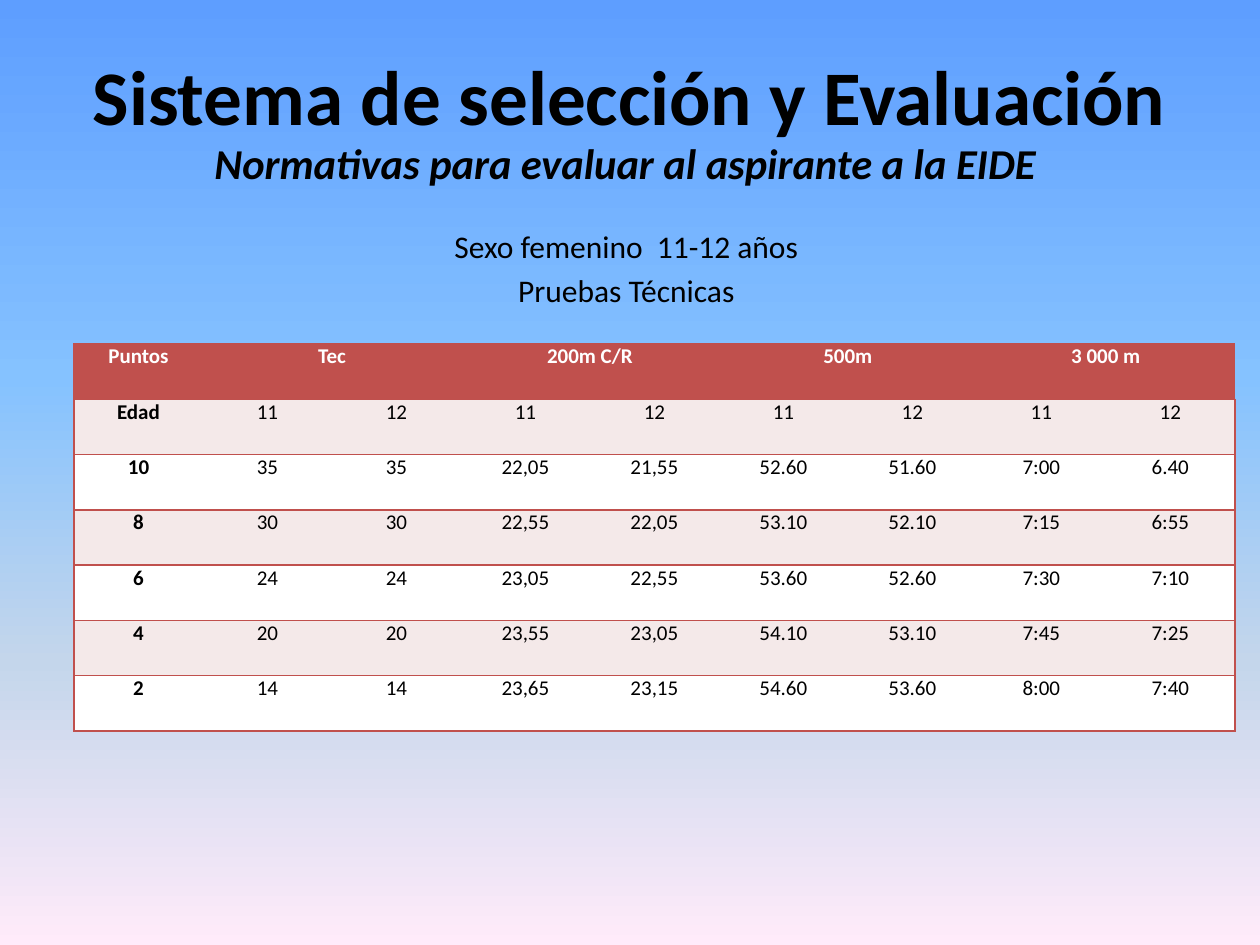
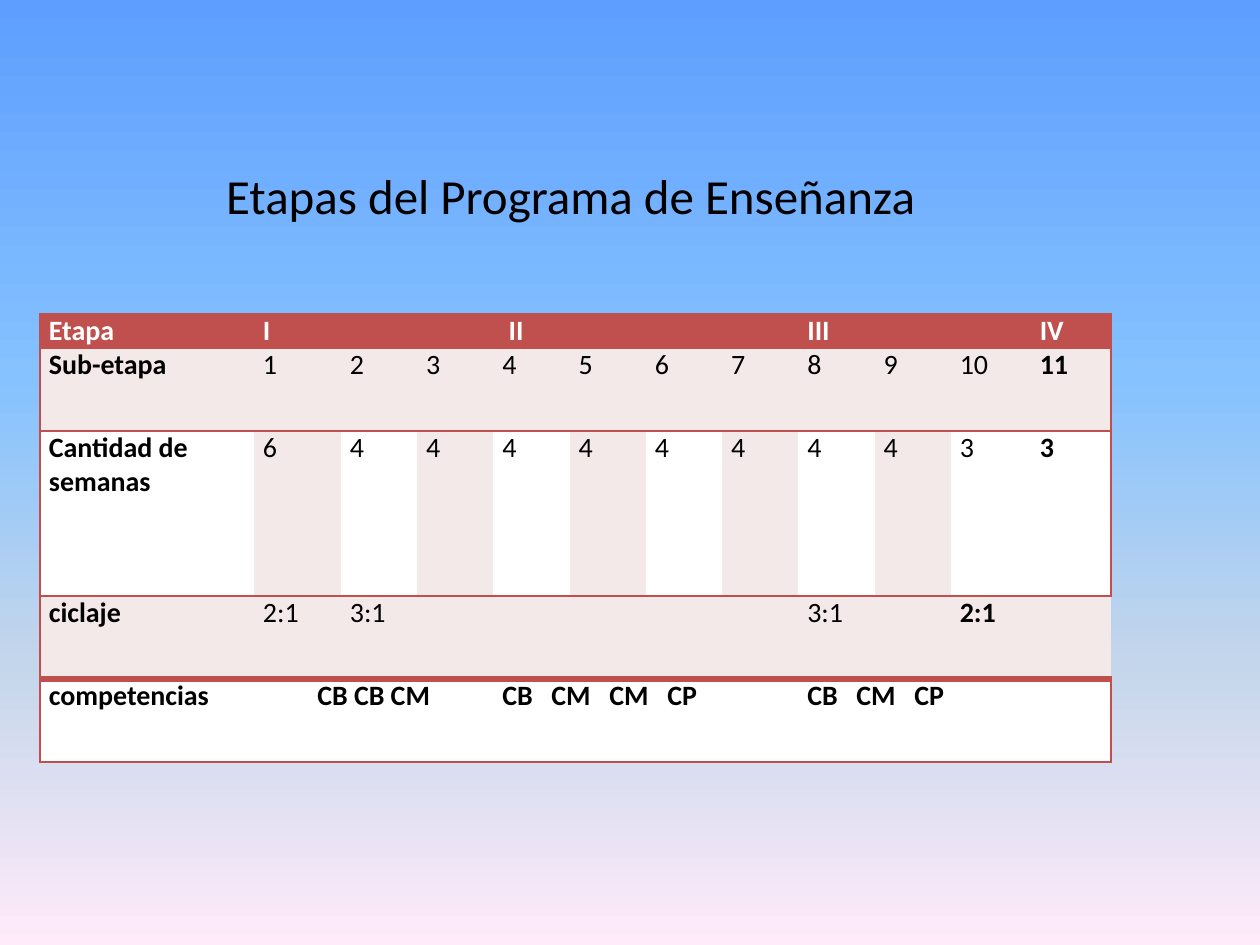
import lxml.etree
import pptx
import pptx.dml.color
import pptx.enum.text
import pptx.oxml.ns
import pptx.util

RGBColor = pptx.dml.color.RGBColor
Align = pptx.enum.text.PP_ALIGN
qn = pptx.oxml.ns.qn

BLACK = RGBColor(0x00, 0x00, 0x00)
WHITE = RGBColor(0xFF, 0xFF, 0xFF)
RED = RGBColor(0xC0, 0x50, 0x4D)
PINK = RGBColor(0xF4, 0xE9, 0xE9)
SKY_STOPS = [
    (0, RGBColor(0x5E, 0x9E, 0xFF)),
    (40, RGBColor(0x85, 0xC2, 0xFF)),
    (70, RGBColor(0xC4, 0xD6, 0xEB)),
    (100, RGBColor(0xFF, 0xEB, 0xFA)),
]

FONT = "Calibri"
PX_PER_INCH = 126
NO_STYLE_NO_GRID = "{2D5ABB26-0587-4C30-8999-92F81FD0307C}"

# Each cell is a text and the number of columns it spans.
SCORE_HEADER = [("Puntos", 1), ("Tec", 2), ("200m C/R", 2), ("500m", 2), ("3 000 m", 2)]
SCORES = [
    ["Edad"] + ["11", "12"] * 4,
    ["10", "35", "35", "22,05", "21,55", "52.60", "51.60", "7:00", "6.40"],
    ["8", "30", "30", "22,55", "22,05", "53.10", "52.10", "7:15", "6:55"],
    ["6", "24", "24", "23,05", "22,55", "53.60", "52.60", "7:30", "7:10"],
    ["4", "20", "20", "23,55", "23,05", "54.10", "53.10", "7:45", "7:25"],
    ["2", "14", "14", "23,65", "23,15", "54.60", "53.60", "8:00", "7:40"],
]
WEEKS = ["6"] + ["4"] * 8 + ["3", "3"]
STAGES = [
    [("Etapa", 1), ("I", 3), (" II", 4), ("III", 3), ("IV", 1)],
    [("Sub-etapa", 1)] + [(str(number), 1) for number in range(1, 12)],
    [("Cantidad de semanas", 1)] + [(weeks, 1) for weeks in WEEKS],
    [("ciclaje", 1), ("2:1", 1), ("3:1", 6), ("3:1", 2), ("2:1", 2)],
    [("competencias", 1), ("CB CB CM", 3), ("CB\tCM\tCM\tCP", 4), ("CB\tCM\tCP", 3), ("", 1)],
]
COMPETITION_TABS = [49, 107, 165]


def px(length):
    return pptx.util.Emu(round(length * 914400 / PX_PER_INCH))


def set_background(master):
    fill = master.background.fill
    fill.gradient()
    fill.gradient_angle = 270
    stops = master.element.find(".//" + qn("a:gsLst"))
    for stop in list(stops):
        stops.remove(stop)
    for percent, color in SKY_STOPS:
        stop = lxml.etree.SubElement(stops, qn("a:gs"), pos=str(percent * 1000))
        lxml.etree.SubElement(stop, qn("a:srgbClr"), val=str(color))


def format_paragraph(paragraph, size, color=BLACK, bold=False, italic=False, alignment=Align.CENTER):
    paragraph.alignment = alignment
    for run in paragraph.runs:
        font = run.font
        font.name, font.size, font.color.rgb = FONT, pptx.util.Pt(size), color
        font.bold, font.italic = bold, italic


def add_text(slide, box, lines):
    """Write one paragraph for each (text, format options) pair."""
    frame = slide.shapes.add_textbox(*map(px, box)).text_frame
    frame.word_wrap = True
    frame.text = "\n".join(text for text, _ in lines)
    for paragraph, (_, options) in zip(frame.paragraphs, lines):
        format_paragraph(paragraph, **options)
    return frame


def set_border(cell, side, width):
    properties = cell._tc.get_or_add_tcPr()
    line = lxml.etree.SubElement(properties, qn("a:ln" + side), w=str(pptx.util.Pt(width)))
    fill = lxml.etree.SubElement(line, qn("a:solidFill"))
    lxml.etree.SubElement(fill, qn("a:srgbClr"), val=str(RED))


def set_tab_stops(paragraph, positions):
    tabs = lxml.etree.SubElement(paragraph._p.get_or_add_pPr(), qn("a:tabLst"))
    for position in positions:
        lxml.etree.SubElement(tabs, qn("a:tab"), pos=str(px(position)), algn="l")


def style_grid(table, rule_widths):
    """Band the rows and rule them; rule_widths holds the line above each row and the last line."""
    last_column = len(table.columns) - 1
    for row_index, row in enumerate(table.rows):
        for column_index, cell in enumerate(row.cells):
            if column_index == 0:
                set_border(cell, "L", 1)
            if column_index == last_column:
                set_border(cell, "R", 1)
            set_border(cell, "T", rule_widths[row_index])
            set_border(cell, "B", rule_widths[row_index + 1])
            cell.fill.solid()
            cell.fill.fore_color.rgb = RED if row_index == 0 else (WHITE, PINK)[row_index % 2]
            cell.margin_left = cell.margin_right = px(9)
            cell.margin_top = cell.margin_bottom = 0


def add_grid(slide, corner, widths, heights, rows, size, alignment, is_bold, rule_widths):
    """Add a banded table; is_bold takes the row and the first and last column of a cell."""
    box = (*corner, sum(widths), sum(heights))
    frame = slide.shapes.add_table(len(heights), len(widths), *map(px, box))
    table = frame.table
    table.first_row = table.horz_banding = False
    table._tbl.tblPr.find(qn("a:tableStyleId")).text = NO_STYLE_NO_GRID
    for column, width in zip(table.columns, widths):
        column.width = px(width)
    for row, height in zip(table.rows, heights):
        row.height = px(height)
    style_grid(table, rule_widths)

    for row_index, row in enumerate(rows):
        first = 0
        for text, span in row:
            last = first + span - 1
            cell = table.cell(row_index, first)
            if span > 1:
                cell.merge(table.cell(row_index, last))
            cell.text_frame.text = text
            format_paragraph(
                cell.text_frame.paragraphs[0], size, WHITE if row_index == 0 else BLACK,
                bold=is_bold(row_index, first, last), alignment=alignment)
            first = last + 1
    return table


def build_selection_slide(slide):
    title = add_text(slide, (63, 38, 1134, 157), [
        ("Sistema de selección y Evaluación", dict(size=44.1, bold=True)),
        ("Normativas para evaluar al aspirante a la EIDE ", dict(size=24.3, bold=True, italic=True)),
    ])
    title.margin_top = px(10)
    title.paragraphs[1].line_spacing = 0.95

    body = add_text(slide, (63, 221, 1134, 624), [
        ("Sexo femenino  11-12 años ", dict(size=18)),
        ("Pruebas Técnicas ", dict(size=18)),
    ])
    body.paragraphs[1].space_before = pptx.util.Pt(3.6)

    rows = [SCORE_HEADER] + [[(text, 1) for text in row] for row in SCORES]
    add_grid(
        slide, (74, 344), [1161 / 9] * 9, [387 / 7] * 7, rows, 12, Align.CENTER,
        is_bold=lambda row, first, last: row == 0 or first == 0,
        rule_widths=[1] * 8)


def build_stages_slide(slide):
    widths = [214, 87] + [610 / 8] * 8 + [80, 80]
    table = add_grid(
        slide, (40, 314), widths, [34, 83, 165, 83, 83], STAGES, 16, Align.LEFT,
        is_bold=lambda row, first, last: row in (0, 4) or first == 0 or last == 11,
        rule_widths=[1, 1, 1, 1, 4, 1])
    for column in range(1, 10, 2):
        table.cell(2, column).fill.fore_color.rgb = PINK
    table.cell(4, 1).text_frame.paragraphs[0].alignment = Align.CENTER
    for column in (4, 8):
        set_tab_stops(table.cell(4, column).text_frame.paragraphs[0], COMPETITION_TABS)

    add_text(slide, (139, 159, 863, 72), [("Etapas del Programa de Enseñanza", dict(size=28))])


def main():
    presentation = pptx.Presentation()
    presentation.slide_width, presentation.slide_height = px(1260), px(945)
    set_background(presentation.slide_master)
    blank = presentation.slide_layouts[6]
    for build in (build_selection_slide, build_stages_slide):
        build(presentation.slides.add_slide(blank))
    presentation.save("out.pptx")


if __name__ == "__main__":
    main()
